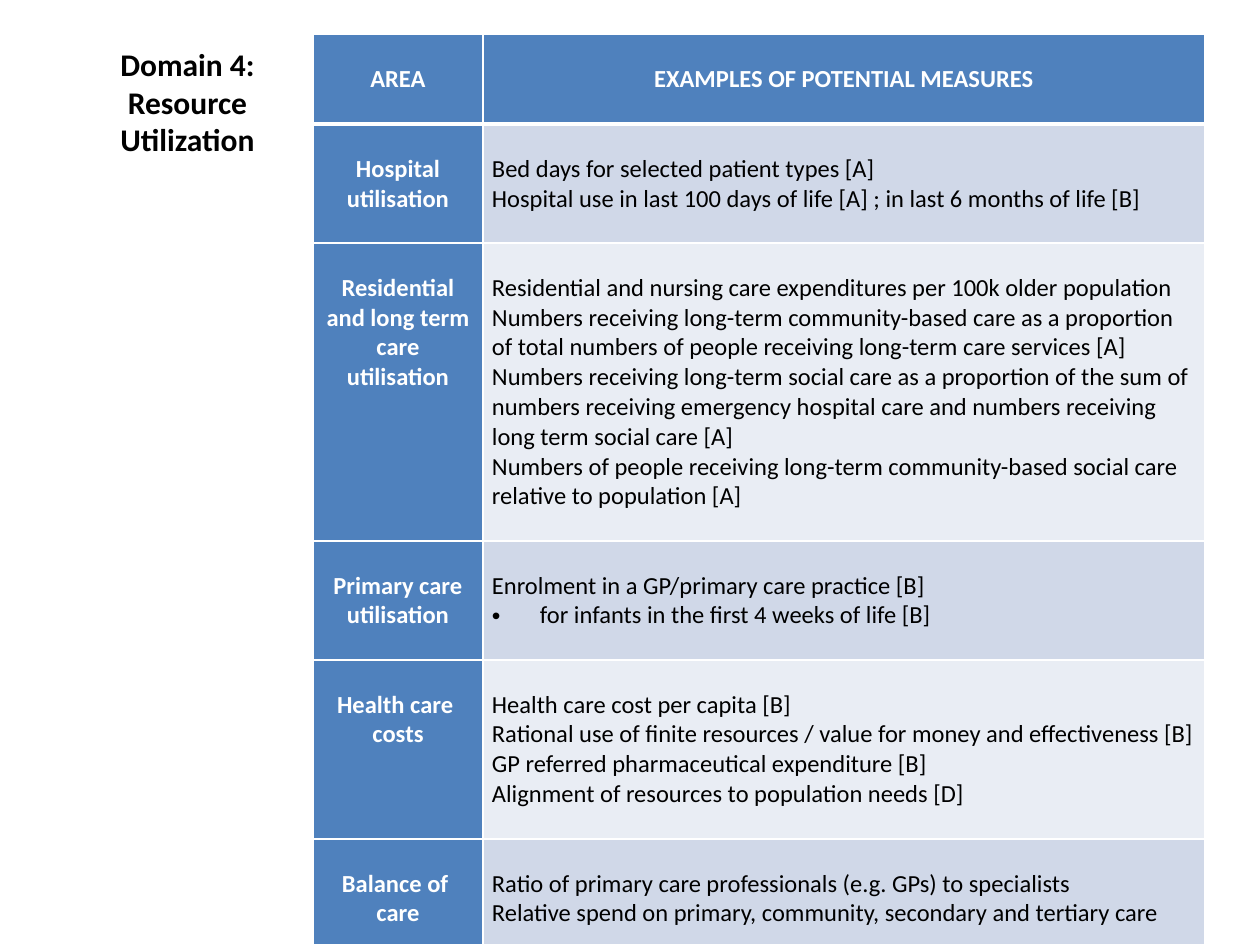
from dataclasses import dataclass

from lxml.etree import SubElement
from pptx import Presentation
from pptx.dml.color import RGBColor
from pptx.enum.text import MSO_ANCHOR as Anchor, PP_ALIGN as Align
from pptx.oxml.ns import qn
from pptx.util import Pt

EMU_PER_PX = 914400 // 126
FONT = "Calibri"
WHITE, BLACK, BLUE = "FFFFFF", "000000", "4F81BD"
BANDS = ("D0D8E8", "E9EDF4")
COLUMN_WIDTHS = (170, 722)
HEADER_HEIGHT = 90
TEXT_TOP = 30
SIDE_MARGIN = 9
BULLET_INDENT = 48


@dataclass(frozen=True)
class AreaRow:
    area: tuple[str, ...]
    measures: tuple[str, ...]
    height: int
    bulleted: tuple[str, ...] = ()


HEADERS = ("AREA", "EXAMPLES OF POTENTIAL MEASURES")
ROWS = (
    AreaRow(("Hospital utilisation",), (
        "Bed days for selected patient types [A]",
        "Hospital use in last 100 days of life [A] ; in last 6 months of life [B]",
    ), 119),
    AreaRow(("Residential and long term care", "utilisation"), (
        "Residential and nursing care expenditures per 100k older population",
        "Numbers receiving long-term community-based care as a proportion "
        "of total numbers of people receiving long-term care services [A]",
        "Numbers receiving long-term social care as a proportion of the sum of "
        "numbers receiving emergency hospital care and numbers receiving "
        "long term social care [A]",
        "Numbers of people receiving long-term community-based social care "
        "relative to population [A]",
    ), 298),
    AreaRow(("Primary care utilisation",),
            ("Enrolment in a GP/primary care practice [B]",), 119,
            ("for infants in the first 4 weeks of life [B]",)),
    AreaRow(("Health care ", "costs"), (
        "Health care cost per capita [B]",
        "Rational use of finite resources / value for money and effectiveness [B]",
        "GP referred pharmaceutical expenditure [B]",
        "Alignment of resources to population needs [D]",
    ), 179),
    AreaRow(("Balance of ", "care"), (
        "Ratio of primary care professionals (e.g. GPs) to specialists",
        "Relative spend on primary, community, secondary and tertiary care",
    ), 106),
)


def px(length: int) -> int:
    return length * EMU_PER_PX


def rgb(color: str) -> RGBColor:
    return RGBColor.from_string(color)


def add_run(paragraph, text: str, size: int, color: str, bold: bool) -> None:
    run = paragraph.add_run()
    run.text = text
    run.font.name = FONT
    run.font.size = Pt(size)
    run.font.bold = bold
    run.font.color.rgb = rgb(color)


def set_borders(cell, top: int = 1, bottom: int = 1) -> None:
    """Draw white cell borders; widths are in points."""
    properties = cell._tc.get_or_add_tcPr()
    for side, width in (("L", 1), ("R", 1), ("T", top), ("B", bottom)):
        line = SubElement(properties, qn(f"a:ln{side}"), w=str(Pt(width)))
        fill = SubElement(line, qn("a:solidFill"))
        SubElement(fill, qn("a:srgbClr"), val=WHITE)


def add_bullet(paragraph) -> None:
    properties = paragraph._p.get_or_add_pPr()
    properties.set("marL", str(px(BULLET_INDENT)))
    properties.set("indent", str(-px(BULLET_INDENT)))
    SubElement(properties, qn("a:buFont"), typeface="Arial")
    SubElement(properties, qn("a:buChar"), char="•")


def fill_cell(cell, lines: tuple[str, ...], fill: str, color: str, bold: bool,
              align: Align, bulleted: tuple[str, ...] = ()) -> None:
    cell.fill.solid()
    cell.fill.fore_color.rgb = rgb(fill)
    cell.margin_left = cell.margin_right = px(SIDE_MARGIN)
    cell.margin_top = cell.margin_bottom = 0
    frame = cell.text_frame
    for index, text in enumerate(lines + bulleted):
        paragraph = frame.add_paragraph() if index else frame.paragraphs[0]
        paragraph.alignment = align
        if index >= len(lines):
            add_bullet(paragraph)
        add_run(paragraph, text, 14, color, bold)


def add_title(slide) -> None:
    title = slide.shapes.title
    title.left, title.top, title.width, title.height = map(px, (63, 38, 249, 127))
    title.text_frame.vertical_anchor = Anchor.MIDDLE
    paragraph = title.text_frame.paragraphs[0]
    paragraph.alignment = Align.CENTER
    add_run(paragraph, "Domain 4: Resource Utilization", 18, BLACK, True)


def add_measures_table(slide) -> None:
    heights = (HEADER_HEIGHT, *(row.height for row in ROWS))
    table = slide.shapes.add_table(
        len(heights), len(COLUMN_WIDTHS), px(313), px(34),
        px(sum(COLUMN_WIDTHS)), px(sum(heights))).table
    for column, width in zip(table.columns, COLUMN_WIDTHS):
        column.width = px(width)
    for table_row, height in zip(table.rows, heights):
        table_row.height = px(height)

    for cell, header in zip(table.rows[0].cells, HEADERS):
        set_borders(cell, bottom=3)
        fill_cell(cell, (header,), BLUE, WHITE, True, Align.CENTER)
        cell.vertical_anchor = Anchor.MIDDLE

    for index, row in enumerate(ROWS):
        area, measures = table.rows[index + 1].cells
        for cell in (area, measures):
            set_borders(cell, top=1 if index else 3)
        fill_cell(area, row.area, BLUE, WHITE, True, Align.CENTER)
        fill_cell(measures, row.measures, BANDS[index % 2], BLACK, False,
                  Align.LEFT, row.bulleted)
        area.margin_top = measures.margin_top = px(TEXT_TOP)


def main() -> None:
    presentation = Presentation()
    presentation.slide_width, presentation.slide_height = px(1260), px(945)
    slide = presentation.slides.add_slide(presentation.slide_layouts[5])
    add_title(slide)
    add_measures_table(slide)
    presentation.save("out.pptx")


if __name__ == "__main__":
    main()
